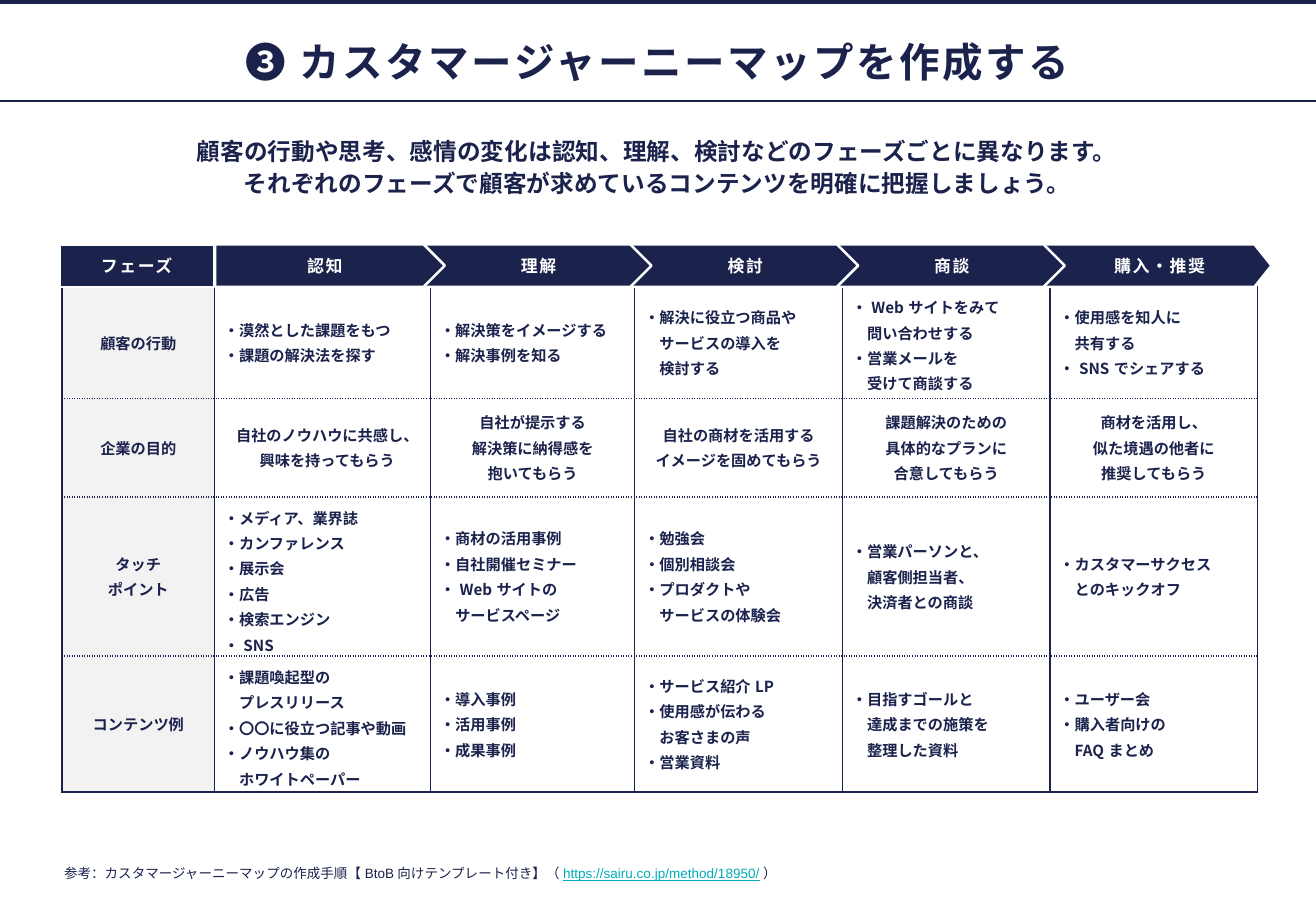
"""Build the customer journey map slide."""
from lxml import etree
from pptx import Presentation, util as u
from pptx.dml.color import RGBColor
from pptx.enum import shapes, text
from pptx.oxml.ns import qn

COLORS = {"navy": "1B224C", "white": "FFFFFF", "grey": "F2F2F2", "teal": "00ACBA"}
NOTO = "Noto Sans CJK JP"
INSET = u.Cm(0.1)
LEFT, CENTER = text.PP_ALIGN.LEFT, text.PP_ALIGN.CENTER


def style(run, size, color, bold, font, tracking):
    run.font.size = u.Pt(size)
    run.font.bold = bold
    run.font.color.rgb = RGBColor.from_string(COLORS[color])
    run.font.name = font
    props = run.font._element
    props.set("spc", str(round(tracking * 100)))
    east_asian = etree.Element(qn("a:ea"), typeface=NOTO)
    props.find(qn("a:latin")).addnext(east_asian)


def write(frame, lines, size, color="navy", bold=True, font=NOTO,
          tracking=0, align=CENTER, after=0):
    frame.text = "\n".join(lines)
    frame.word_wrap = True
    for paragraph in frame.paragraphs:
        paragraph.alignment = align
        paragraph.space_after = u.Pt(after)
        for run in paragraph.runs:
            style(run, size, color, bold, font, tracking)


deck = Presentation()
deck.slide_width, deck.slide_height = u.Cm(27.51), u.Cm(19.05)
slide = deck.slides.add_slide(deck.slide_layouts[6])

title_rule = slide.shapes.add_connector(
    shapes.MSO_CONNECTOR.STRAIGHT, 0, u.Cm(2.11), deck.slide_width, u.Cm(2.11))
title_rule.line.color.rgb = RGBColor.from_string(COLORS["navy"])
title_rule.line.width = u.Pt(1)
etree.SubElement(title_rule._element.spPr, qn("a:effectLst"))

top_band = slide.shapes.add_shape(
    shapes.MSO_SHAPE.RECTANGLE, 0, u.Cm(-0.08), deck.slide_width, u.Cm(0.16))
top_band.shadow.inherit = False
top_band.fill.solid()
top_band.fill.fore_color.rgb = RGBColor.from_string(COLORS["navy"])
top_band.line.fill.background()

frames = []
for left, top, width, height, anchor in [
    (1.24, 0.53, 25, 1, text.MSO_ANCHOR.MIDDLE),
    (1.24, 2.77, 25, 1.73, text.MSO_ANCHOR.TOP),
    (1.24, 18.06, 21.9, 0.4, text.MSO_ANCHOR.MIDDLE),
]:
    frame = slide.shapes.add_textbox(
        u.Cm(left), u.Cm(top), u.Cm(width), u.Cm(height)).text_frame
    frame.margin_left = frame.margin_right = INSET
    frame.margin_top = frame.margin_bottom = INSET
    frame.vertical_anchor = anchor
    frames.append(frame)
title, message, reference = frames

write(title, ["❸ カスタマージャーニーマップを作成する"], 24, font="Arial", tracking=1.5)
title.paragraphs[0].line_spacing = 1.5
write(message, [
    "顧客の行動や思考、感情の変化は認知、理解、検討などのフェーズごとに異なります。",
    "それぞれのフェーズで顧客が求めているコンテンツを明確に把握しましょう。",
], 14, after=2.25)
write(reference, ["参考：カスタマージャーニーマップの作成手順【BtoB向けテンプレート付き】（"],
      8, bold=False, font="Arial", align=LEFT)
for words, color in [("https://sairu.co.jp/method/18950/", "teal"), ("）", "navy")]:
    run = reference.paragraphs[0].add_run()
    run.text = words
    style(run, 8, color, False, "Arial", 0)
    run.font.underline = color == "teal"

journey = [
    [["顧客の行動"],
     ["・漠然とした課題をもつ", "・課題の解決法を探す"],
     ["・解決策をイメージする", "・解決事例を知る"],
     ["・解決に役立つ商品や", "サービスの導入を", "検討する"],
     ["・Webサイトをみて", "問い合わせする", "・営業メールを", "受けて商談する"],
     ["・使用感を知人に", "共有する", "・SNSでシェアする"]],
    [["企業の目的"],
     ["自社のノウハウに共感し、", "興味を持ってもらう"],
     ["自社が提示する", "解決策に納得感を", "抱いてもらう"],
     ["自社の商材を活用する", "イメージを固めてもらう"],
     ["課題解決のための", "具体的なプランに", "合意してもらう"],
     ["商材を活用し、", "似た境遇の他者に", "推奨してもらう"]],
    [["タッチ", "ポイント"],
     ["・メディア、業界誌", "・カンファレンス", "・展示会", "・広告", "・検索エンジン", "・SNS"],
     ["・商材の活用事例", "・自社開催セミナー", "・Webサイトの", "サービスページ"],
     ["・勉強会", "・個別相談会", "・プロダクトや", "サービスの体験会"],
     ["・営業パーソンと、", "顧客側担当者、", "決済者との商談"],
     ["・カスタマーサクセス", "とのキックオフ"]],
    [["コンテンツ例"],
     ["・課題喚起型の", "プレスリリース", "・〇〇に役立つ記事や動画",
      "・ノウハウ集の", "ホワイトペーパー"],
     ["・導入事例", "・活用事例", "・成果事例"],
     ["・サービス紹介LP", "・使用感が伝わる", "お客さまの声", "・営業資料"],
     ["・目指すゴールと", "達成までの施策を", "整理した資料"],
     ["・ユーザー会", "・購入者向けの", "FAQまとめ"]],
]
column_widths = [3.18, 4.52, 4.27, 4.34, 4.34, 4.34]
row_heights = [2.34, 2.06, 3.33, 2.84]
journey_map = slide.shapes.add_table(
    len(journey), len(column_widths), u.Cm(1.3), u.Cm(5.99),
    u.Cm(sum(column_widths)), u.Cm(sum(row_heights))).table
journey_map.first_row = journey_map.horz_banding = False
for column, width in zip(journey_map.columns, column_widths):
    column.width = u.Cm(width)
for row, height in zip(journey_map.rows, row_heights):
    row.height = u.Cm(height)

for r, row_lines in enumerate(journey):
    for c, lines in enumerate(row_lines):
        cell = journey_map.cell(r, c)
        bulleted = lines[0].startswith("・")
        cell.vertical_anchor = text.MSO_ANCHOR.MIDDLE
        cell.margin_left = u.Cm(0.25 if c == 0 else 0.2 if bulleted else 0.3 if c == 1 else 0.1)
        cell.margin_right = u.Cm(0.25 if c == 0 else 0.1)
        cell.margin_top = cell.margin_bottom = u.Cm(0.25 if c == 0 else 0.2)
        write(cell.text_frame, lines, 9, align=LEFT if bulleted else CENTER, after=2)
        for paragraph in cell.text_frame.paragraphs:
            if bulleted and not paragraph.text.startswith("・"):
                paragraph._p.get_or_add_pPr().set("marL", str(u.Pt(9)))

        borders = {"lnL": "solid", "lnR": "solid", "lnT": "sysDot",
                   "lnB": "solid" if r == len(journey) - 1 else "sysDot"}
        if r == 0:
            del borders["lnT"]
        for side, dash in borders.items():
            border = etree.SubElement(
                cell._tc.get_or_add_tcPr(), qn(f"a:{side}"), w=str(u.Pt(1)))
            ink = etree.SubElement(border, qn("a:solidFill"))
            etree.SubElement(ink, qn("a:srgbClr"), val=COLORS["navy"])
            etree.SubElement(border, qn("a:prstDash"), val=dash)
        if c == 0:
            cell.fill.solid()
            cell.fill.fore_color.rgb = RGBColor.from_string(COLORS["grey"])
        else:
            cell.fill.background()

phases = [("フェーズ", 1.24, 3.23, 0, 0.1)]
for i, phase in enumerate(["認知", "理解", "検討", "商談", "購入・推奨"]):
    phases.append((phase, 4.5 + 4.32 * i, 4.8, 0.4 if i == 4 else 0.5, 0.4 if i else 0.1))
for phase, left, width, point, inset in reversed(phases):
    arrow = slide.shapes.add_shape(
        shapes.MSO_SHAPE.PENTAGON, u.Cm(left), u.Cm(5.11), u.Cm(width), u.Cm(0.89))
    arrow.adjustments[0] = point
    arrow.shadow.inherit = False
    arrow.fill.solid()
    arrow.fill.fore_color.rgb = RGBColor.from_string(COLORS["navy"])
    arrow.line.color.rgb = RGBColor.from_string(COLORS["white"])
    arrow.line.width = u.Pt(1.5)
    label = arrow.text_frame
    label.margin_left = u.Cm(inset)
    label.margin_right = label.margin_top = label.margin_bottom = INSET
    label.vertical_anchor = text.MSO_ANCHOR.MIDDLE
    write(label, [phase], 10, color="white", tracking=1)

deck.save("out.pptx")
